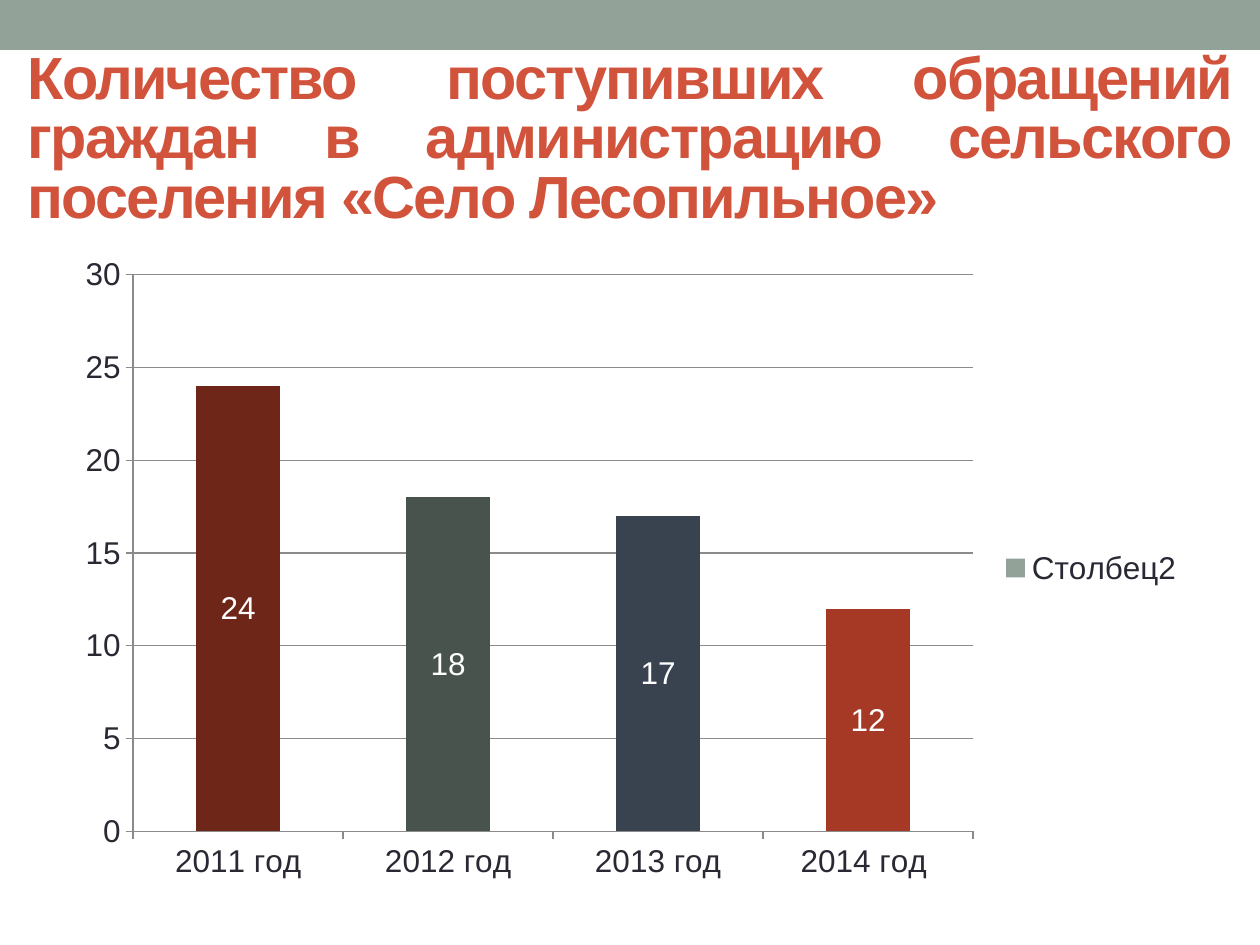
from pptx import Presentation
from pptx.chart.data import CategoryChartData as Data
from pptx.dml.color import RGBColor as Rgb
from pptx.enum.chart import XL_CHART_TYPE as Kind, XL_LABEL_POSITION as Spot
from pptx.enum.chart import XL_LEGEND_POSITION as Side, XL_TICK_MARK as Tick
from pptx.enum.shapes import MSO_SHAPE as Form
from pptx.enum.text import MSO_ANCHOR as Anchor, MSO_AUTO_SIZE as Fit, PP_ALIGN as Align
from pptx.util import Pt

SAGE, RED, INK, GREY, WHITE = "93A299", "D2533C", "292934", "8B8B8B", "FFFFFF"


def px(*nums):
    return [round(n * 914400 / 126) for n in nums]


def tint(code):
    return Rgb.from_string(code)


class Deck:
    face = "Arial"

    def __init__(self):
        self.prs = Presentation()
        self.prs.slide_width, self.prs.slide_height = px(1260, 945)
        self.slide = self.prs.slides.add_slide(self.prs.slide_layouts[5])

    def paint(self, fill, code):
        fill.solid()
        fill.fore_color.rgb = tint(code)

    def style(self, font, size, code):
        font.name = self.face
        font.size = Pt(size)
        font.color.rgb = tint(code)

    def band(self, box, code):
        shape = self.slide.shapes.add_shape(Form.RECTANGLE, *px(*box))
        shape.shadow.inherit = False
        self.paint(shape.fill, code)
        shape.line.fill.background()

    def title(self, box, text, size, code):
        shape = self.slide.shapes.title
        shape.left, shape.top, shape.width, shape.height = px(*box)
        frame = shape.text_frame
        frame.word_wrap = True
        frame.auto_size = Fit.NONE
        frame.vertical_anchor = Anchor.MIDDLE
        para = frame.paragraphs[0]
        para.alignment = Align.JUSTIFY
        para.line_spacing = Pt(size)
        run = para.add_run()
        run.text = text
        self.style(run.font, size, code)
        run.font.bold = True
        run.font._element.set("spc", "-100")

    def rule(self, line):
        line.color.rgb = tint(GREY)
        line.width = Pt(0.75)

    def columns(self, box, name, rows, top, step):
        data = Data()
        data.categories = [cat for cat, _, _ in rows]
        data.add_series(name, [num for _, num, _ in rows])
        chart = self.slide.shapes.add_chart(Kind.COLUMN_STACKED, *px(*box), data).chart
        chart.has_title = False
        self.style(chart.font, 18, INK)
        chart.has_legend = True
        chart.legend.position = Side.RIGHT
        chart.legend.include_in_layout = False

        for axis in (chart.category_axis, chart.value_axis):
            axis.major_tick_mark = Tick.OUTSIDE
            axis.minor_tick_mark = Tick.NONE
            self.rule(axis.format.line)
        scale = chart.value_axis
        scale.minimum_scale, scale.maximum_scale, scale.major_unit = 0, top, step
        scale.has_major_gridlines = True
        self.rule(scale.major_gridlines.format.line)

        plot = chart.plots[0]
        plot.vary_by_categories = False
        plot.gap_width, plot.overlap = 150, 100
        series = plot.series[0]
        self.paint(series.format.fill, SAGE)
        for i, (_, _, code) in enumerate(rows):
            self.paint(series.points[i].format.fill, code)
        labels = series.data_labels
        labels.show_value = True
        labels.position = Spot.CENTER
        self.style(labels.font, 18, WHITE)


def main():
    deck = Deck()
    deck.band((0, 0, 1260, 50), SAGE)
    deck.columns((63, 244, 1134, 648), "Столбец2", [
        ("2011 год", 24, "6E2619"),
        ("2012 год", 18, "47534C"),
        ("2013 год", 17, "394350"),
        ("2014 год ", 12, "A53926"),
    ], 30, 5)
    deck.title((15, 73, 1230, 136),
               "Количество поступивших обращений граждан в администрацию "
               "сельского поселения «Село Лесопильное»", 34, RED)
    deck.prs.save("out.pptx")


if __name__ == "__main__":
    main()
